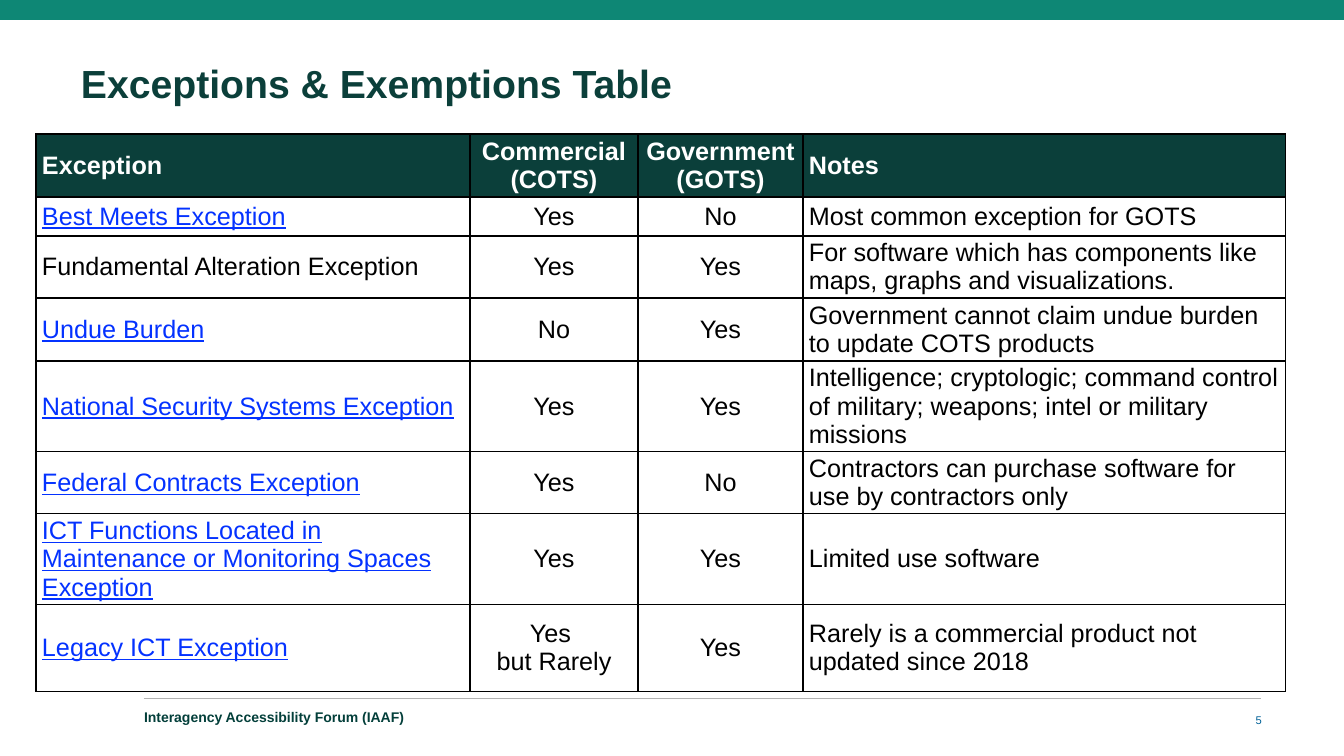
from dataclasses import dataclass

from lxml import etree
from pptx import Presentation
from pptx.dml.color import RGBColor
from pptx.enum.shapes import MSO_CONNECTOR, MSO_SHAPE
from pptx.enum.text import MSO_ANCHOR, PP_ALIGN
from pptx.oxml.ns import qn
from pptx.util import Pt

LEFT, CENTER, RIGHT = PP_ALIGN.LEFT, PP_ALIGN.CENTER, PP_ALIGN.RIGHT
TOP, MIDDLE = MSO_ANCHOR.TOP, MSO_ANCHOR.MIDDLE
RECTANGLE = MSO_SHAPE.RECTANGLE
STRAIGHT = MSO_CONNECTOR.STRAIGHT

TITLE = "Exceptions & Exemptions Table"
FOOTER = "Interagency Accessibility Forum (IAAF)"
PAGE_NUMBER = "5"
HEADINGS = ("Exception", "Commercial (COTS)", "Government (GOTS)", "Notes")
EXCEPTIONS = [
    ("Best Meets Exception", "Yes", "No", "Most common exception for GOTS"),
    ("Fundamental Alteration Exception", "Yes", "Yes",
     "For software which has components like maps, graphs and visualizations."),
    ("Undue Burden", "No", "Yes",
     "Government cannot claim undue burden to update COTS products"),
    ("National Security Systems Exception", "Yes", "Yes",
     "Intelligence; cryptologic; command control of military; weapons; "
     "intel or military missions"),
    ("Federal Contracts Exception", "Yes", "No",
     "Contractors can purchase software for use by contractors only"),
    ("ICT Functions Located in Maintenance or Monitoring Spaces Exception",
     "Yes", "Yes", "Limited use software"),
    ("Legacy ICT Exception", "Yes \vbut Rarely", "Yes",
     "Rarely is a commercial product not updated since 2018"),
]
UNLINKED = "Fundamental Alteration Exception"

SLIDE_WIDTH, SLIDE_HEIGHT = 1344, 756
TABLE_LEFT, TABLE_TOP = 36, 134
COLUMN_WIDTHS = (434, 168, 165, 483)
ROW_HEIGHTS = (63, 39, 62, 63, 85, 62, 87, 87)
COLUMN_ALIGNS = (LEFT, CENTER, CENTER, LEFT)
CELL_INSET = 6
EMU_PER_PX = 12192000 / SLIDE_WIDTH


@dataclass(frozen=True)
class Theme:
    font: str = "Arial"
    band: str = "0E8775"
    dark: str = "0B3F3A"
    footer: str = "033F3A"
    number: str = "006197"
    link: str = "0432FF"
    ink: str = "000000"
    white: str = "FFFFFF"
    rule: str = "B2B2B2"
    title_size: int = 28
    table_size: int = 18
    footer_size: int = 10
    number_size: int = 8
    rule_width: float = 0.75
    border_width: int = 1


THEME = Theme()


def px(length):
    return round(length * EMU_PER_PX)


def style_paragraph(para, size, color, align=LEFT, bold=False, underline=False):
    para.alignment = align
    for span in para.runs:
        font = span.font
        font.name, font.size = THEME.font, Pt(size)
        font.bold, font.underline = bold, underline
        font.color.rgb = RGBColor.from_string(color)


def add_text(page, text, place, size, color, align=LEFT, bold=False,
             anchor=MIDDLE, inset_top=0, spacing=1.0):
    frame = page.shapes.add_textbox(*map(px, place)).text_frame
    frame.word_wrap = True
    frame.vertical_anchor = anchor
    frame.margin_left = frame.margin_right = frame.margin_bottom = 0
    frame.margin_top = px(inset_top)
    frame.text = text
    para = frame.paragraphs[0]
    para.line_spacing = spacing
    style_paragraph(para, size, color, align, bold)


def add_borders(cell):
    properties = cell._tc.get_or_add_tcPr()
    for side in ("a:lnL", "a:lnR", "a:lnT", "a:lnB"):
        line = etree.SubElement(properties, qn(side), w=str(Pt(THEME.border_width)))
        fill = etree.SubElement(line, qn("a:solidFill"))
        etree.SubElement(fill, qn("a:srgbClr"), val=THEME.ink)


def fill_cell(cell, text, align, is_heading, is_link):
    add_borders(cell)
    cell.margin_left = cell.margin_right = px(CELL_INSET)
    cell.margin_top = cell.margin_bottom = 0
    cell.vertical_anchor = MIDDLE
    if is_heading:
        cell.fill.solid()
        cell.fill.fore_color.rgb = RGBColor.from_string(THEME.dark)
        color = THEME.white
    else:
        cell.fill.background()
        color = THEME.link if is_link else THEME.ink
    para = cell.text_frame.paragraphs[0]
    para.text = text
    style_paragraph(para, THEME.table_size, color, align, is_heading, is_link)


def add_exceptions_table(page):
    rows = [HEADINGS, *EXCEPTIONS]
    table = page.shapes.add_table(
        len(rows), len(HEADINGS), px(TABLE_LEFT), px(TABLE_TOP),
        px(sum(COLUMN_WIDTHS)), px(sum(ROW_HEIGHTS))).table
    table.horz_banding = False
    for column, width in zip(table.columns, COLUMN_WIDTHS):
        column.width = px(width)
    for row, height in zip(table.rows, ROW_HEIGHTS):
        row.height = px(height)
    for r, texts in enumerate(rows):
        for c, text in enumerate(texts):
            is_link = r > 0 and c == 0 and text != UNLINKED
            fill_cell(table.cell(r, c), text, COLUMN_ALIGNS[c], r == 0, is_link)


def add_frame(page):
    """Draw the band along the top and the rule above the footer."""
    band = page.shapes.add_shape(RECTANGLE, 0, 0, px(SLIDE_WIDTH), px(20))
    band.shadow.inherit = False
    band.fill.solid()
    band.fill.fore_color.rgb = RGBColor.from_string(THEME.band)
    band.line.fill.background()
    rule = page.shapes.add_connector(STRAIGHT, px(144), px(699), px(1261), px(699))
    rule.line.color.rgb = RGBColor.from_string(THEME.rule)
    rule.line.width = Pt(THEME.rule_width)
    etree.SubElement(rule._element.spPr, qn("a:effectLst"))


def main():
    deck = Presentation()
    deck.slide_width, deck.slide_height = px(SLIDE_WIDTH), px(SLIDE_HEIGHT)
    page = deck.slides.add_slide(deck.slide_layouts[6])
    add_frame(page)
    add_text(page, FOOTER, (144, 710, 707, 19), THEME.footer_size, THEME.footer,
             bold=True, spacing=0.5)
    add_text(page, TITLE, (81, 60, 1182, 47), THEME.title_size, THEME.dark,
             bold=True, anchor=TOP, inset_top=5, spacing=0.9)
    add_exceptions_table(page)
    add_text(page, PAGE_NUMBER, (1204, 710, 58, 20), THEME.number_size,
             THEME.number, align=RIGHT)
    deck.save("out.pptx")


if __name__ == "__main__":
    main()
